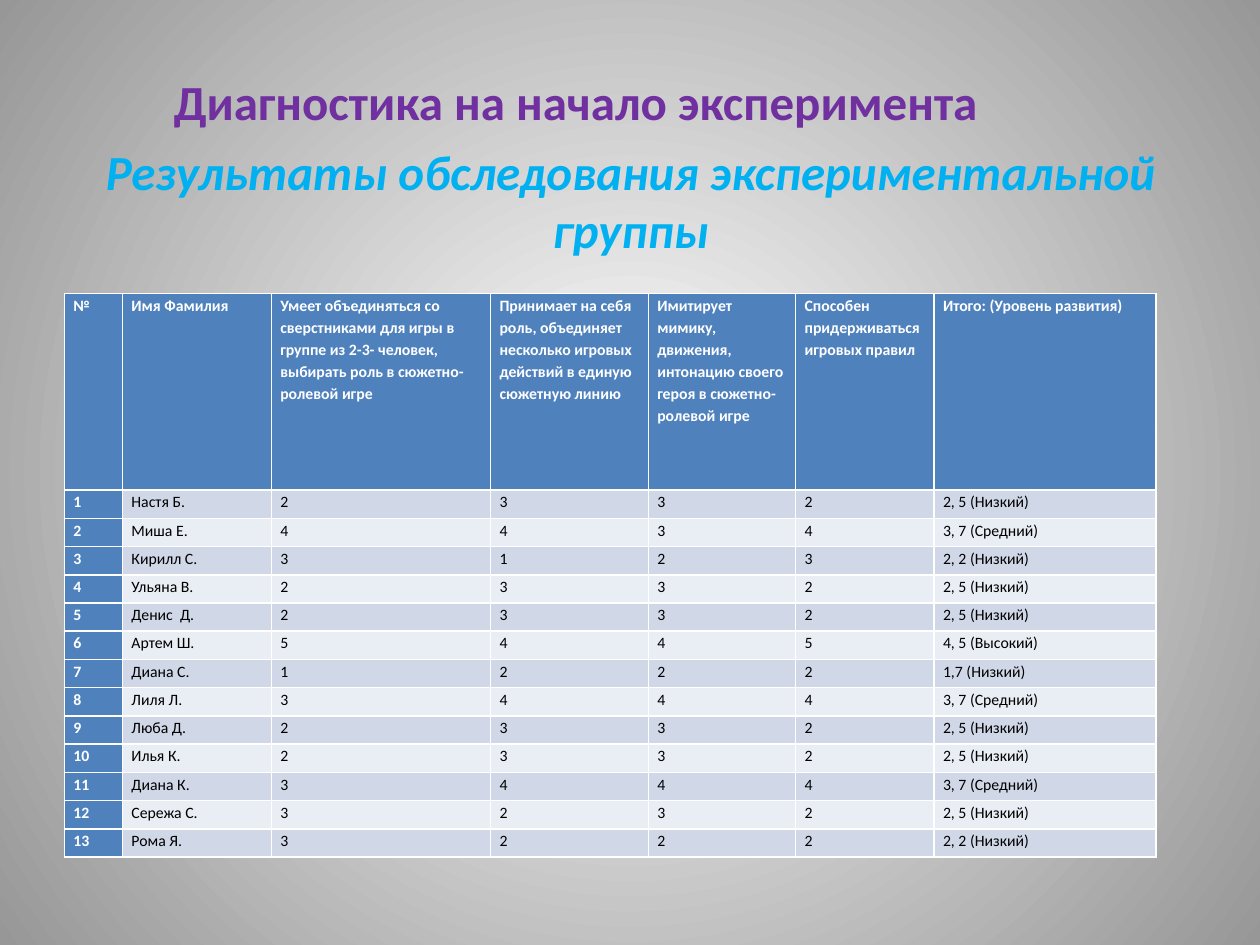
from lxml.etree import SubElement
from pptx import Presentation
from pptx.dml.color import RGBColor
from pptx.enum.text import MSO_ANCHOR, MSO_AUTO_SIZE, PP_ALIGN
from pptx.oxml.ns import qn
from pptx.util import Cm, Pt

FONT = "Calibri"
WHITE = RGBColor(0xFF, 0xFF, 0xFF)
BLACK = RGBColor(0, 0, 0)
GREY = RGBColor(0x97, 0x97, 0x97)
PURPLE = RGBColor(0x70, 0x30, 0xA0)
SKY = RGBColor(0x00, 0xB0, 0xF0)
BLUE = RGBColor(0x4F, 0x81, 0xBD)
BANDS = (RGBColor(0xD0, 0xD8, 0xE8), RGBColor(0xE9, 0xED, 0xF4))

# text, colour, italic, alignment, left indent in cm
TITLE = [
    ("Диагностика на начало эксперимента", PURPLE, False, PP_ALIGN.LEFT, 2.54),
    ("Результаты обследования экспериментальной группы", SKY, True,
     PP_ALIGN.CENTER, 0),
]

# heading, column width in cm
HEADS = [
    ("№", 1.17),
    ("Имя Фамилия", 3),
    ("Умеет объединяться со сверстниками для игры в группе из 2-3- человек, "
     "выбирать роль в сюжетно-ролевой игре", 4.42),
    ("Принимает на себя роль, объединяет несколько игровых действий "
     "в единую сюжетную линию", 3.18),
    ("Имитирует мимику, движения, интонацию своего героя "
     "в сюжетно-ролевой игре", 2.97),
    ("Способен придерживаться игровых правил", 2.79),
    ("Итого: (Уровень развития)", 4.47),
]

# name, four marks, total
KIDS = [
    ("Настя Б.", 2, 3, 3, 2, "2, 5 (Низкий)"),
    ("Миша Е.", 4, 4, 3, 4, "3, 7 (Средний)"),
    ("Кирилл С.", 3, 1, 2, 3, "2, 2 (Низкий)"),
    ("Ульяна В.", 2, 3, 3, 2, "2, 5 (Низкий)"),
    ("Денис  Д.", 2, 3, 3, 2, "2, 5 (Низкий)"),
    ("Артем Ш.", 5, 4, 4, 5, "4, 5 (Высокий)"),
    ("Диана С.", 1, 2, 2, 2, "1,7 (Низкий)"),
    ("Лиля Л.", 3, 4, 4, 4, "3, 7 (Средний)"),
    ("Люба Д.", 2, 3, 3, 2, "2, 5 (Низкий)"),
    ("Илья К.", 2, 3, 3, 2, "2, 5 (Низкий)"),
    ("Диана К.", 3, 4, 4, 4, "3, 7 (Средний)"),
    ("Сережа С.", 3, 2, 3, 2, "2, 5 (Низкий)"),
    ("Рома Я.", 3, 2, 2, 2, "2, 2 (Низкий)"),
]
HEAD_H, ROW_H = 3.96, 0.57


def style(para, size, color, bold=True, italic=False):
    """Set the font of a whole paragraph."""
    font = para.font
    font.name, font.size = FONT, Pt(size)
    font.bold, font.italic = bold, italic
    font.color.rgb = color


def paint_back(slide):
    """Fill the background with a round gradient, white in the middle."""
    fill = slide.background.fill
    fill.gradient()
    for stop, color in zip(fill.gradient_stops, (WHITE, GREY)):
        stop.color.rgb = color
    grad = slide.element.find(".//" + qn("a:gradFill"))
    grad.remove(grad.find(qn("a:lin")))
    round_el = SubElement(grad, qn("a:path"), path="circle")
    SubElement(round_el, qn("a:fillToRect"),
               {side: "50000" for side in "ltrb"})


def add_title(slide):
    """Place and fill the two-part title."""
    title = slide.shapes.title
    title.left, title.top = Cm(0.71), Cm(1.32)
    title.width, title.height = Cm(24), Cm(4.4)
    frame = title.text_frame
    frame.auto_size = MSO_AUTO_SIZE.NONE
    frame.vertical_anchor = MSO_ANCHOR.TOP
    frame.text = "\n".join(part[0] for part in TITLE)
    for para, (_, color, italic, align, indent) in zip(frame.paragraphs, TITLE):
        para.alignment = align
        para.space_before = Pt(6)
        para._p.get_or_add_pPr().set("marL", str(Cm(indent)))
        style(para, 28, color, italic=italic)


def fill_cell(cell, text, back, strong, align):
    """Write one table cell."""
    cell.fill.solid()
    cell.fill.fore_color.rgb = back
    cell.margin_left = cell.margin_right = Cm(0.18)
    cell.margin_top = cell.margin_bottom = 0
    cell.text = str(text)
    para = cell.text_frame.paragraphs[0]
    para.alignment = align
    para.line_spacing = 1.15
    style(para, 9, WHITE if strong else BLACK, bold=strong)


def add_marks(slide):
    """Build the table of marks."""
    rows = [[head for head, _ in HEADS]]
    rows += [(num, *kid) for num, kid in enumerate(KIDS, 1)]
    wide = sum(width for _, width in HEADS)
    high = HEAD_H + ROW_H * len(KIDS)
    table = slide.shapes.add_table(len(rows), len(HEADS), Cm(1.3), Cm(5.92),
                                   Cm(wide), Cm(high)).table
    table.first_col = True
    for col, (_, width) in zip(table.columns, HEADS):
        col.width = Cm(width)
    for r, row in enumerate(rows):
        table.rows[r].height = Cm(ROW_H if r else HEAD_H)
        for c, text in enumerate(row):
            strong = r == 0 or c == 0
            back = BLUE if strong else BANDS[(r - 1) % 2]
            long = r == 0 and 2 <= c <= 5
            align = PP_ALIGN.LEFT if long else PP_ALIGN.JUSTIFY
            fill_cell(table.cell(r, c), text, back, strong, align)


deck = Presentation()
deck.slide_width, deck.slide_height = Cm(25.4), Cm(19.05)
page = deck.slides.add_slide(deck.slide_layouts[5])
paint_back(page)
add_title(page)
add_marks(page)
deck.save("out.pptx")
